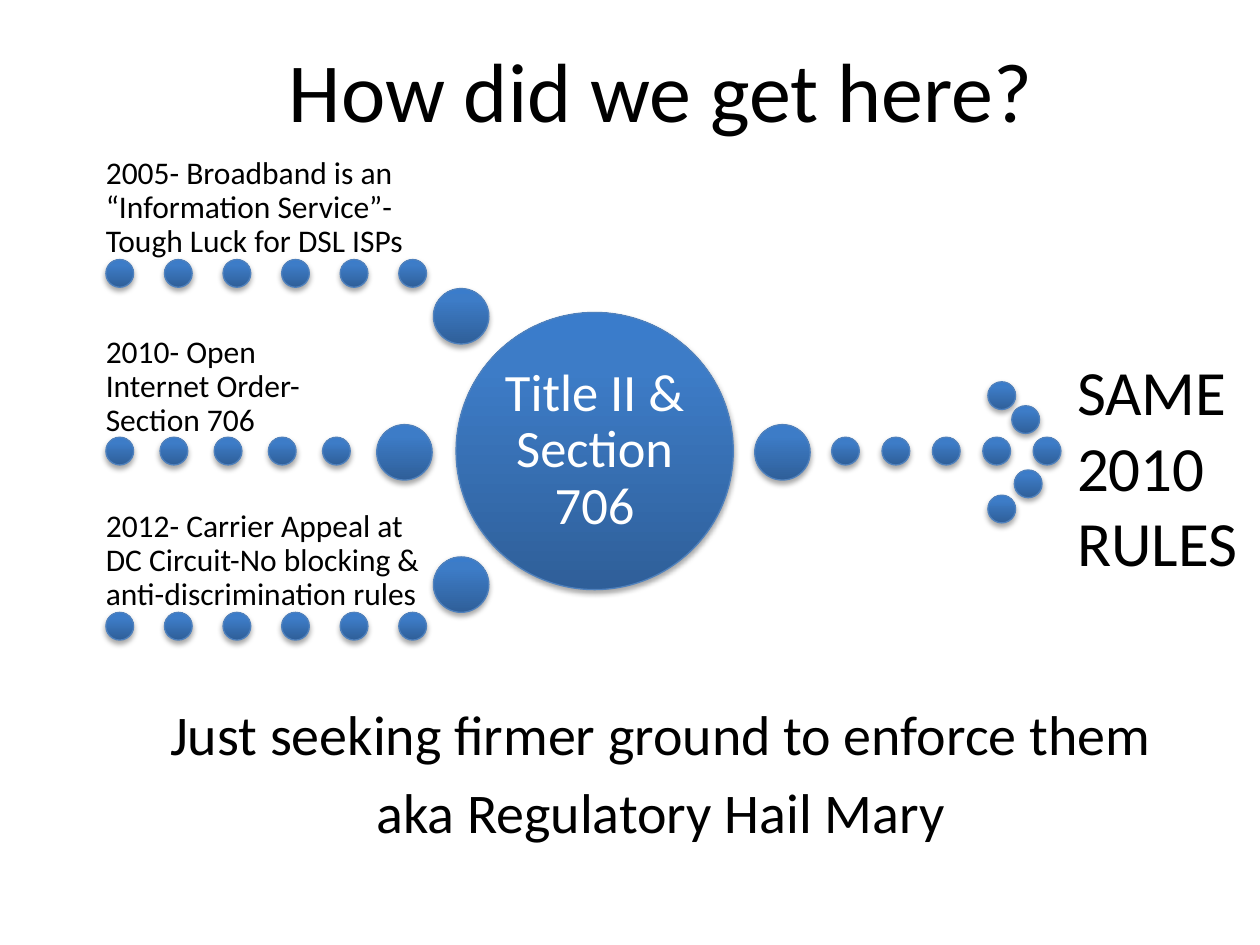
"""Build a slide showing three dotted paths that meet in a hub and lead to one outcome."""
from dataclasses import dataclass

from pptx import Presentation
from pptx.dml.color import RGBColor
from pptx.enum.shapes import MSO_SHAPE
from pptx.enum.text import MSO_ANCHOR, MSO_AUTO_SIZE, PP_ALIGN
from pptx.oxml import parse_xml
from pptx.oxml.ns import nsdecls
from pptx.util import Inches, Pt

ELLIPSE = MSO_SHAPE.OVAL
TOP, MIDDLE, BOTTOM = MSO_ANCHOR.TOP, MSO_ANCHOR.MIDDLE, MSO_ANCHOR.BOTTOM
LEFT, CENTER = PP_ALIGN.LEFT, PP_ALIGN.CENTER
NO_FIT, GROW = MSO_AUTO_SIZE.NONE, MSO_AUTO_SIZE.SHAPE_TO_FIT_TEXT

COLORS = {
    "text": "000000",
    "hub_text": "FFFFFF",
    "outline": "4F81BD",
    "shadow": "000000",
    "dark": "2F5F99",
    "mid": "3D7CC7",
    "light": "3A7CCB",
}
STOPS = {0: "dark", 80: "mid", 100: "light"}
FONT = "Calibri"
WIDTH, HEIGHT = Inches(10), Inches(7.5)
COLUMNS, ROWS = 100, 75
DOT, BALL, HUB = 2.2, 4.4, 22
PATH_LEFT = 8.4


@dataclass(frozen=True)
class Box:
    """An area in grid columns and rows."""
    left: float
    top: float
    width: float
    height: float


@dataclass(frozen=True)
class Trail:
    """A level run of equal circles, spaced by a step in columns."""
    left: float
    top: float
    count: int = 1
    step: float = 0
    diameter: float = DOT


@dataclass(frozen=True)
class TextStyle:
    """The look of the text in one shape."""
    size: float
    color: str = "text"
    alignment: PP_ALIGN = LEFT
    anchor: MSO_ANCHOR = TOP
    line_spacing: float = 1.0
    space_before: float = 0
    inset: tuple[float, float] = (0.1, 0.05)
    fit: MSO_AUTO_SIZE = NO_FIT


@dataclass(frozen=True)
class Label:
    """A text box with its paragraphs."""
    box: Box
    paragraphs: tuple[str, ...]
    style: TextStyle


TITLE_STYLE = TextStyle(48, alignment=CENTER, anchor=MIDDLE)
BODY_STYLE = TextStyle(32, alignment=CENTER, space_before=6.4)
HUB_STYLE = TextStyle(30, "hub_text", CENTER, MIDDLE, 0.9, inset=(0.04, 0.04))
PATH_STYLE = TextStyle(18, anchor=BOTTOM, line_spacing=0.9, inset=(0, 0))
OUTCOME_STYLE = TextStyle(36, fit=GROW)

TITLE = Label(Box(8.3, 0.8, 88.3, 12.5), ("How did we get here?",), TITLE_STYLE)
BODY = Label(
    Box(8.3, 55, 88.3, 9.5),
    ("Just seeking firmer ground to enforce them", "aka Regulatory Hail Mary"),
    BODY_STYLE,
)
LABELS = (
    Label(Box(PATH_LEFT, 15, 25.5, 5.6),
          ("2005- Broadband is an “Information Service”- Tough Luck for DSL ISPs",), PATH_STYLE),
    Label(Box(PATH_LEFT, 29.2, 19.3, 5.6),
          ("2010- Open Internet Order- Section 706",), PATH_STYLE),
    Label(Box(PATH_LEFT, 43, 25.5, 5.6),
          ("2012- Carrier Appeal at DC Circuit-No blocking & anti-discrimination rules",), PATH_STYLE),
    Label(Box(84.5, 27.5, 15.8, 19.2), ("SAME", "2010 RULES"), OUTCOME_STYLE),
)
HUB_TRAIL = Trail(36.2, 24.8, diameter=HUB)
TRAILS = (
    Trail(PATH_LEFT, 20.6, 6, 4.65),
    Trail(PATH_LEFT, 34.7, 5, 4.3),
    Trail(PATH_LEFT, 48.6, 6, 4.65),
    Trail(66, 34.7, 5, 4),
    Trail(34.4, 22.9, diameter=BALL),
    Trail(29.9, 33.7, diameter=BALL),
    Trail(34.4, 44.2, diameter=BALL),
    Trail(59.9, 33.7, diameter=BALL),
    Trail(78.4, 30.3),
    Trail(80.3, 32.2),
    Trail(80.5, 37.3),
    Trail(78.4, 39.3),
)


def apply(target, values: dict) -> None:
    """Set every attribute of a target from a dict."""
    for name, value in values.items():
        setattr(target, name, value)


def emu(box: Box) -> dict[str, int]:
    """Turn grid columns and rows into slide lengths."""
    return {
        "left": round(WIDTH * box.left / COLUMNS),
        "top": round(HEIGHT * box.top / ROWS),
        "width": round(WIDTH * box.width / COLUMNS),
        "height": round(HEIGHT * box.height / ROWS),
    }


def write_text(shape, paragraphs: tuple[str, ...], style: TextStyle) -> None:
    """Fill a shape with formatted paragraphs."""
    frame = shape.text_frame
    frame.text = "\n".join(paragraphs)
    across, down = (Inches(value) for value in style.inset)
    apply(frame, {
        "word_wrap": True, "auto_size": style.fit, "vertical_anchor": style.anchor,
        "margin_left": across, "margin_right": across,
        "margin_top": down, "margin_bottom": down,
    })
    for index, paragraph in enumerate(frame.paragraphs):
        apply(paragraph, {
            "alignment": style.alignment, "line_spacing": style.line_spacing,
            "space_before": Pt(style.space_before if index else 0),
        })
        apply(paragraph.font, {"name": FONT, "size": Pt(style.size)})
        paragraph.font.color.rgb = RGBColor.from_string(COLORS[style.color])


def fill_placeholder(shape, label: Label) -> None:
    """Move a placeholder and write its text without bullets."""
    apply(shape, emu(label.box))
    write_text(shape, label.paragraphs, label.style)
    for paragraph in shape.text_frame.paragraphs:
        properties = paragraph._p.get_or_add_pPr()
        properties.set("marL", "0")
        properties.set("indent", "0")
        properties.append(parse_xml(f"<a:buNone {nsdecls('a')}/>"))
        for default in properties.findall("{*}defRPr"):
            properties.append(default)


def add_label(slide, label: Label) -> None:
    """Add a text box."""
    write_text(slide.shapes.add_textbox(**emu(label.box)), label.paragraphs, label.style)


def add_trail(slide, trail: Trail) -> list:
    """Add the shaded circles of a trail and return them."""
    stops = "".join(
        f'<a:gs pos="{share * 1000}"><a:srgbClr val="{COLORS[name]}"/></a:gs>'
        for share, name in STOPS.items()
    )
    circles = []
    for index in range(trail.count):
        box = Box(trail.left + index * trail.step, trail.top, trail.diameter, trail.diameter)
        circle = slide.shapes.add_shape(ELLIPSE, **emu(box))
        circle.shadow.inherit = False
        circle.line.color.rgb = RGBColor.from_string(COLORS["outline"])
        circle.line.width = Pt(0.75)
        properties = circle._element.spPr
        properties.insert(2, parse_xml(
            f'<a:gradFill {nsdecls("a")} rotWithShape="1"><a:gsLst>{stops}</a:gsLst>'
            '<a:lin ang="16200000" scaled="0"/></a:gradFill>'))
        properties.find("{*}effectLst").append(parse_xml(
            f'<a:outerShdw {nsdecls("a")} blurRad="{Pt(3.1)}" dist="{Pt(1.8)}" dir="5400000" '
            f'rotWithShape="0"><a:srgbClr val="{COLORS["shadow"]}"><a:alpha val="35000"/>'
            '</a:srgbClr></a:outerShdw>'))
        circles.append(circle)
    return circles


def main() -> None:
    """Build and save the slide."""
    presentation = Presentation()
    apply(presentation, {"slide_width": WIDTH, "slide_height": HEIGHT})
    slide = presentation.slides.add_slide(presentation.slide_layouts[1])
    fill_placeholder(slide.shapes.title, TITLE)
    fill_placeholder(slide.placeholders[1], BODY)
    for trail in TRAILS:
        add_trail(slide, trail)
    hub = add_trail(slide, HUB_TRAIL)[0]
    write_text(hub, ("Title II & Section 706",), HUB_STYLE)
    for label in LABELS:
        add_label(slide, label)
    presentation.save("out.pptx")


if __name__ == "__main__":
    main()
